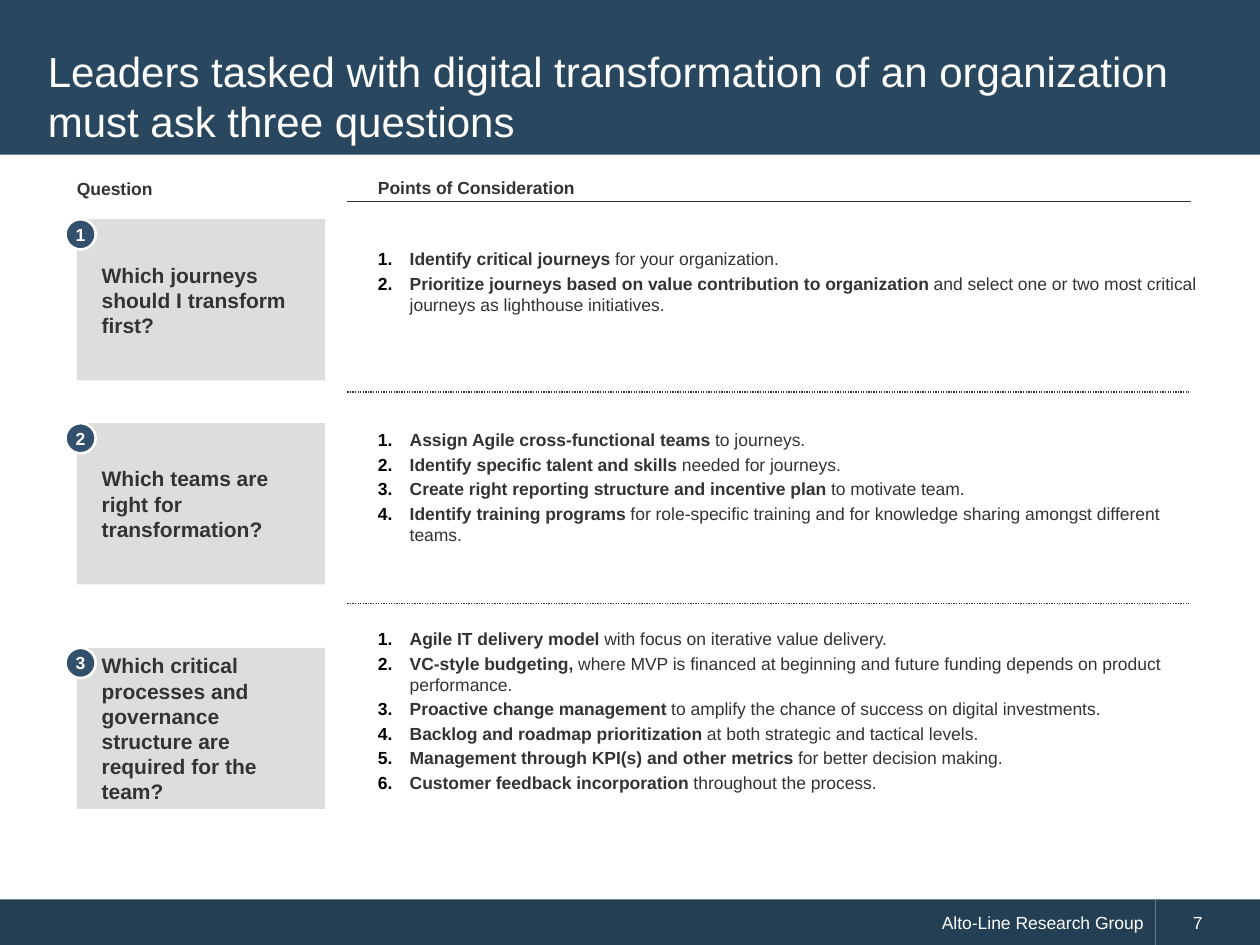
from lxml.etree import SubElement
from pptx import Presentation
from pptx.dml.color import RGBColor
from pptx.enum.dml import MSO_LINE
from pptx.enum.shapes import MSO_CONNECTOR, MSO_SHAPE
from pptx.enum.text import MSO_ANCHOR, MSO_AUTO_SIZE, PP_ALIGN
from pptx.oxml.ns import qn
from pptx.util import Cm, Pt

# Content
TITLE = ("Leaders tasked with digital transformation of an organization "
         "must ask three questions")
FOOTER, PAGE_NUMBER = "Alto-Line Research Group", "7"
# Heading, left, top, width
HEADINGS = [("Question", 1.55, 3.58, 2.95),
            ("Points of Consideration", 7.62, 3.56, 11.2)]
ROWS = [
    {"question": "Which journeys should I transform first?",
     "tile_top": 4.42, "list_top": 5.0, "list_height": 1.35,
     "points": [
         ("Identify critical journeys ", "for your organization."),
         ("Prioritize journeys based on value contribution to organization ",
          "and select one or two most critical journeys as lighthouse initiatives."),
     ]},
    {"question": "Which teams are right for transformation?",
     "tile_top": 8.53, "list_top": 8.64, "list_height": 2.36,
     "points": [
         ("Assign Agile cross-functional teams ", "to journeys."),
         ("Identify specific talent and skills ", "needed for journeys."),
         ("Create right reporting structure and incentive plan ", "to motivate team."),
         ("Identify training programs ",
          "for role-specific training and for knowledge sharing amongst different teams."),
     ]},
    {"question": "Which critical processes and governance structure are "
                 "required for the team?",
     "tile_top": 13.06, "list_top": 12.65, "list_height": 3.35,
     "points": [
         ("Agile IT delivery model ", "with focus on iterative value delivery."),
         ("VC-style budgeting,", " where MVP is financed at beginning and future "
                                 "funding depends on product performance."),
         ("Proactive change management ",
          "to amplify the chance of success on digital investments."),
         ("Backlog and roadmap prioritization ", "at both strategic and tactical levels."),
         ("Management through KPI(s) and other metrics ", "for better decision making."),
         ("Customer feedback incorporation ", "throughout the process."),
     ]},
]
# Top and dash of each rule
RULES = [(4.06, None), (7.9, MSO_LINE.ROUND_DOT), (12.17, MSO_LINE.ROUND_DOT)]

# Look
FONT = "Arial"
WHITE, INK, BLACK = "FFFFFF", "333333", "000000"
HEADER_BLUE, FOOTER_BLUE, BADGE_BLUE, TILE_GREY = "29475F", "243F54", "33506D", "DDDDDD"

# Layout in centimetres
PAGE_WIDTH, PAGE_HEIGHT = 25.4, 19.05
FOOTER_TOP, FOOTER_HEIGHT, FOOTER_SPLIT = 18.13, 0.93, 23.3
TILE_LEFT, TILE_WIDTH, TILE_HEIGHT = 1.55, 5.0, 3.25
BADGE_LEFT, BADGE_SIZE = 1.32, 0.61
LIST_LEFT, LIST_WIDTH, LIST_INDENT = 7.62, 16.5, 0.64
RULE_LEFT, RULE_RIGHT = 7.0, 24.0


def color(hex_text):
    return RGBColor.from_string(hex_text)


def place(*lengths):
    return [Cm(length) for length in lengths]


def format_frame(frame, anchor, insets=None):
    frame.word_wrap = True
    frame.auto_size = MSO_AUTO_SIZE.NONE
    frame.vertical_anchor = anchor
    if insets:
        (frame.margin_left, frame.margin_top,
         frame.margin_right, frame.margin_bottom) = place(*insets)


def format_run(span, size, hex_text, bold=False):
    span.font.name, span.font.size, span.font.bold = FONT, Pt(size), bold
    span.font.color.rgb = color(hex_text)


def write(box, text, size, hex_text, bold=False, align=PP_ALIGN.LEFT,
          anchor=MSO_ANCHOR.MIDDLE, insets=None):
    format_frame(box.text_frame, anchor, insets)
    box.text_frame.text = text
    para = box.text_frame.paragraphs[0]
    para.alignment = align
    format_run(para.runs[0], size, hex_text, bold)
    return para


def add_block(shapes, kind, area, fill):
    block = shapes.add_shape(kind, *place(*area))
    block.shadow.inherit = False
    block.fill.solid()
    block.fill.fore_color.rgb = color(fill)
    block.line.fill.background()
    return block


def add_rule(shapes, top, dash):
    rule = shapes.add_connector(MSO_CONNECTOR.STRAIGHT,
                                *place(RULE_LEFT, top, RULE_RIGHT, top))
    rule.line.color.rgb = color(INK)
    rule.line.width = Pt(0.75)
    if dash:
        rule.line.dash_style = dash
    SubElement(rule._element.spPr, qn("a:effectLst"))


def number_paragraph(para):
    properties = para._p.get_or_add_pPr()
    properties.set("marL", str(Cm(LIST_INDENT)))
    properties.set("indent", str(-Cm(LIST_INDENT)))
    bullet_color = SubElement(properties, qn("a:buClr"))
    SubElement(bullet_color, qn("a:srgbClr"), val=BLACK)
    SubElement(properties, qn("a:buFont"), typeface=FONT)
    SubElement(properties, qn("a:buAutoNum"), type="arabicPeriod")


def add_points(shapes, row):
    box = shapes.add_textbox(*place(LIST_LEFT, row["list_top"],
                                    LIST_WIDTH, row["list_height"]))
    frame = box.text_frame
    format_frame(frame, MSO_ANCHOR.MIDDLE, (0, 0, 0, 0))
    for index, parts in enumerate(row["points"]):
        para = frame.add_paragraph() if index else frame.paragraphs[0]
        para.level = 1
        para.space_before = Pt(2)
        number_paragraph(para)
        for text, bold in zip(parts, (True, False)):
            span = para.add_run()
            span.text = text
            format_run(span, 10, INK, bold)


def add_row(slide, number, row):
    shapes = slide.shapes.add_group_shape().shapes
    top = row["tile_top"]
    tile = add_block(shapes, MSO_SHAPE.RECTANGLE,
                     (TILE_LEFT, top, TILE_WIDTH, TILE_HEIGHT), TILE_GREY)
    write(tile, row["question"], 12, INK, True, insets=(0.5, 0.2, 0.2, 0.2))
    badge = add_block(shapes, MSO_SHAPE.OVAL,
                      (BADGE_LEFT, top, BADGE_SIZE, BADGE_SIZE), BADGE_BLUE)
    badge.line.color.rgb = color(WHITE)
    badge.line.width = Pt(1.5)
    write(badge, str(number), 10, WHITE, True, PP_ALIGN.CENTER, insets=(0, 0, 0, 0))
    add_points(shapes, row)


def main():
    deck = Presentation()
    deck.slide_width, deck.slide_height = place(PAGE_WIDTH, PAGE_HEIGHT)
    slide = deck.slides.add_slide(deck.slide_layouts[5])
    shapes = slide.shapes

    # Header band behind the title
    title = shapes.title
    title.left, title.top, title.width, title.height = place(0.71, 0.71, 23.95, 2.44)
    write(title, TITLE, 24, WHITE)
    band = add_block(shapes, MSO_SHAPE.RECTANGLE, (0, 0, PAGE_WIDTH, 3.12), HEADER_BLUE)
    title._element.addprevious(band._element)

    # Footer: name and page number
    for text, left, right, align, indent in [
            (FOOTER, 0, FOOTER_SPLIT, PP_ALIGN.RIGHT, 0.74),
            (PAGE_NUMBER, FOOTER_SPLIT, PAGE_WIDTH, PP_ALIGN.LEFT, 0.5)]:
        bar = add_block(shapes, MSO_SHAPE.RECTANGLE,
                        (left, FOOTER_TOP, right - left, FOOTER_HEIGHT), FOOTER_BLUE)
        para = write(bar, text, 10, WHITE, align=align)
        para._p.get_or_add_pPr().set("marL", str(Cm(indent)))

    # Column headings and rules
    for text, left, top, width in HEADINGS:
        box = shapes.add_textbox(*place(left, top, width, 0.48))
        write(box, text, 10, INK, True, anchor=MSO_ANCHOR.BOTTOM, insets=(0, 0, 0, 0.05))
    for top, dash in RULES:
        add_rule(shapes, top, dash)

    # Questions with their points
    for number, row in enumerate(ROWS, start=1):
        add_row(slide, number, row)

    deck.save("out.pptx")


if __name__ == "__main__":
    main()
